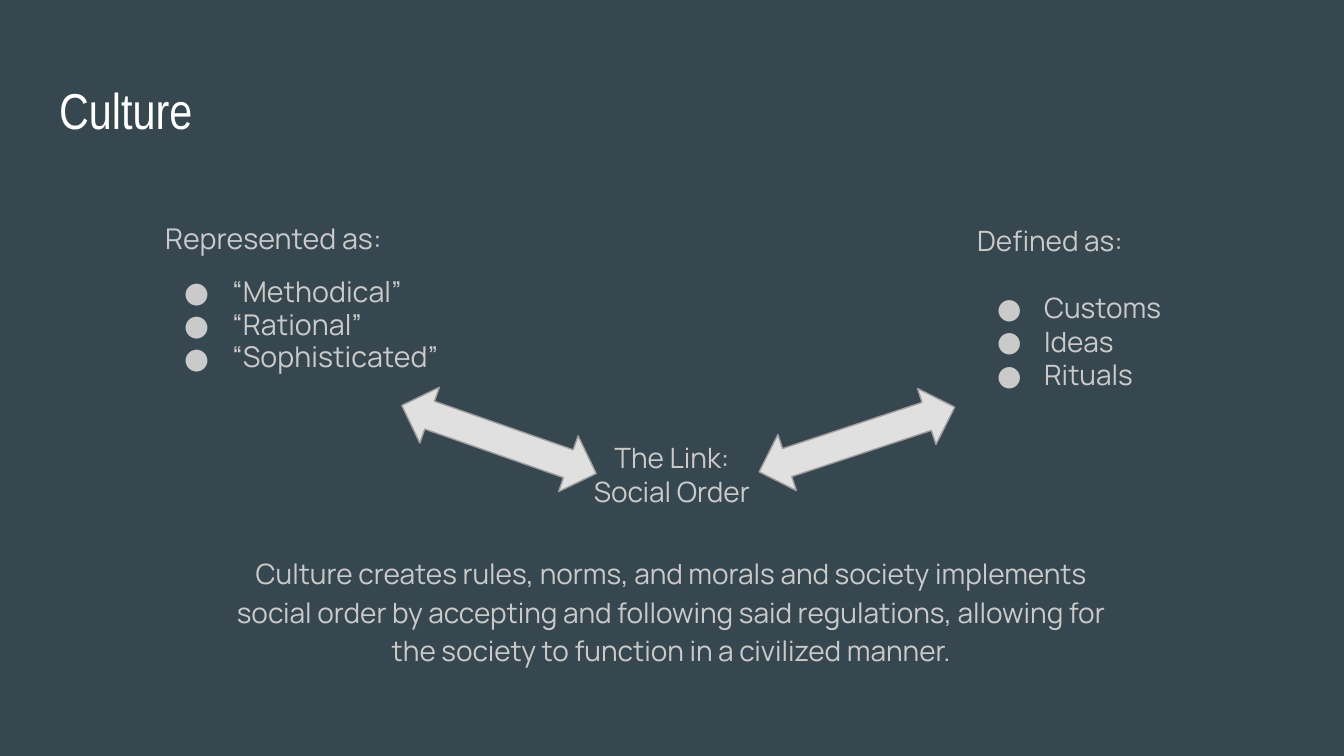
import pptx
import pptx.dml.color
import pptx.enum.shapes
import pptx.enum.text
import pptx.oxml
import pptx.oxml.ns
import pptx.util

PX = 914400 / 134.4
SLATE, WHITE, GREY = "37474F", "FFFFFF", "CACACA"
ARROW_FILL, ARROW_LINE = "E0E0E0", "9E9E9E"
HEADING_FONT, BODY_FONT = "Arial Narrow", "Manrope"
CENTER = pptx.enum.text.PP_ALIGN.CENTER


def px(length):
    return pptx.util.Emu(round(length * PX))


def color(hex_code):
    return pptx.dml.color.RGBColor.from_string(hex_code)


def apply(target, values):
    for name, value in values.items():
        setattr(target, name, value)


def add_bullet(paragraph, indent):
    """Give a paragraph a round bullet with a hanging indent, in px."""
    properties = paragraph._p.get_or_add_pPr()
    properties.set("marL", str(px(67)))
    properties.set("indent", str(-px(indent)))
    namespace = pptx.oxml.ns.nsdecls("a")
    for element in (
        f'<a:buClr {namespace}><a:srgbClr val="{GREY}"/></a:buClr>',
        f'<a:buFont {namespace} typeface="{BODY_FONT}"/>',
        f'<a:buChar {namespace} char="●"/>',
    ):
        properties.append(pptx.oxml.parse_xml(element))


def add_text(slide, box, lines, size=15, font=BODY_FONT, ink=GREY):
    """Each line is its words, its paragraph format and its bullet indent."""
    frame = slide.shapes.add_textbox(*map(px, box)).text_frame
    inset = pptx.util.Inches(0.1)
    apply(frame, {"word_wrap": True, "margin_left": inset, "margin_top": inset,
                  "margin_right": inset, "margin_bottom": inset})
    for number, (words, layout, bullet_indent) in enumerate(lines):
        paragraph = frame.add_paragraph() if number else frame.paragraphs[0]
        apply(paragraph, layout)
        if bullet_indent:
            add_bullet(paragraph, bullet_indent)
        run = paragraph.add_run()
        run.text = words
        apply(run.font, {"name": font, "size": pptx.util.Pt(size)})
        run.font.color.rgb = color(ink)


def add_list(slide, box, heading, items, layout, gap, indent, size):
    """A heading, then bullets, with a gap above the first bullet."""
    lines = [(heading, layout, None)]
    for number, item in enumerate(items):
        above = {} if number else {"space_before": pptx.util.Pt(gap)}
        lines.append((item, {**layout, **above}, indent))
    add_text(slide, box, lines, size)


def add_double_arrow(slide, left, rotation):
    arrow = slide.shapes.add_shape(
        pptx.enum.shapes.MSO_SHAPE.LEFT_RIGHT_ARROW,
        px(left), px(410), px(206), px(59))
    arrow.rotation = rotation
    arrow.shadow.inherit = False
    arrow.fill.solid()
    arrow.fill.fore_color.rgb = color(ARROW_FILL)
    arrow.line.color.rgb = color(ARROW_LINE)
    arrow.line.width = pptx.util.Pt(0.75)


def main():
    deck = pptx.Presentation()
    apply(deck, {"slide_width": px(1344), "slide_height": px(756)})
    slide = deck.slides.add_slide(deck.slide_layouts[6])
    slide.background.fill.solid()
    slide.background.fill.fore_color.rgb = color(SLATE)

    # Title
    add_text(slide, (46, 66, 1253, 85), [("Culture", {}, None)],
             27, HEADING_FONT, WHITE)

    # The two sides of culture
    add_list(slide, (152, 210, 343, 181), "Represented as:",
             ["“Methodical”", "“Rational”", "“Sophisticated”"],
             {"line_spacing": 0.95}, gap=11, indent=48, size=15.3)
    add_list(slide, (964, 210, 329, 196), "Defined as:",
             ["Customs", "Ideas", "Rituals"],
             {}, gap=18, indent=47, size=15)

    # The link between them
    centered = {"alignment": CENTER}
    add_text(slide, (562, 427, 220, 95),
             [(words, centered, None) for words in ("The Link:", "Social Order")])
    for left, rotation in ((754, 341.7), (396, 19.3)):
        add_double_arrow(slide, left, rotation)

    # Summary
    summary = ("Culture creates rules, norms, and morals and society implements "
               "social order by accepting and following said regulations, "
               "allowing for the society to function in a civilized manner.")
    layout = {**centered, "line_spacing": 1.15, "space_before": pptx.util.Pt(11)}
    add_text(slide, (216, 538, 911, 140), [(summary, layout, None)])

    deck.save("out.pptx")


if __name__ == "__main__":
    main()
